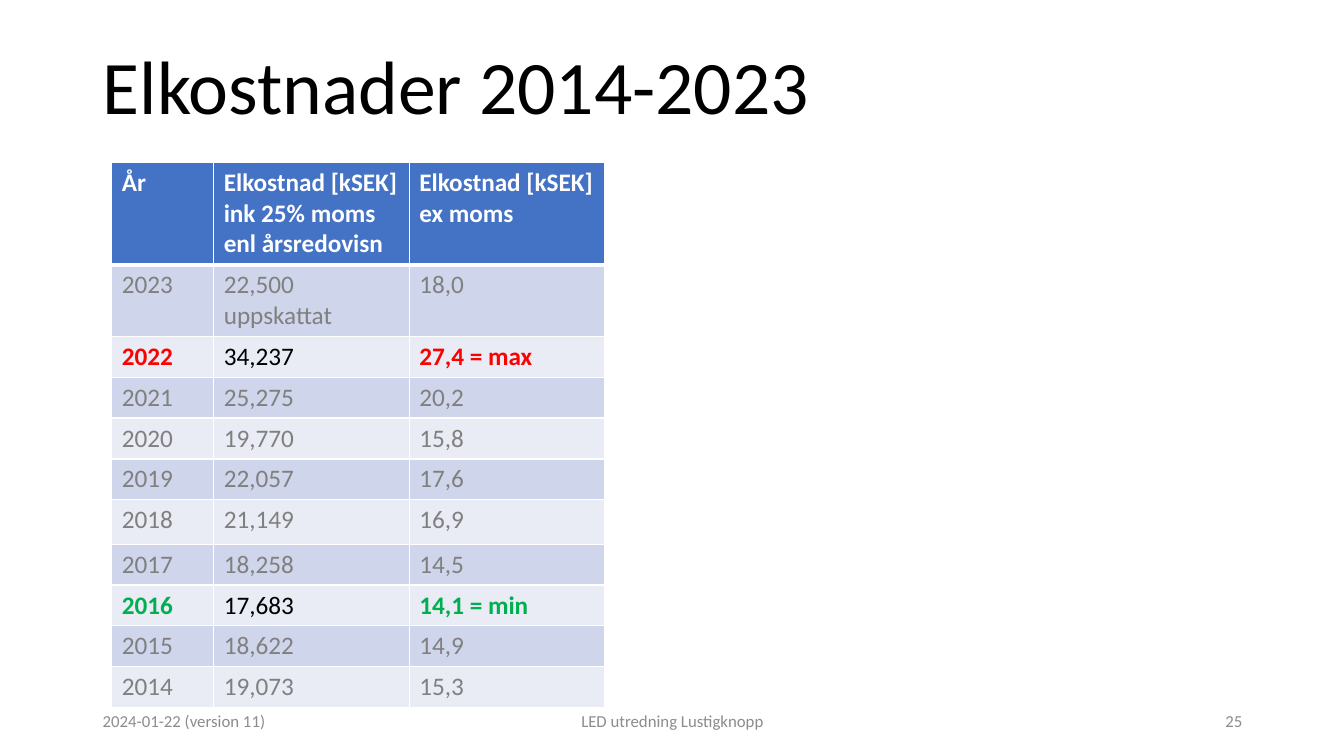
import pptx
import pptx.util
import pptx.dml.color
import pptx.enum.text
import pptx.oxml.ns
import lxml.etree

RGB = pptx.dml.color.RGBColor
ALIGN = pptx.enum.text.PP_ALIGN
MIDDLE = pptx.enum.text.MSO_ANCHOR.MIDDLE

BLACK = RGB(0x00, 0x00, 0x00)
WHITE = RGB(0xFF, 0xFF, 0xFF)
GREY = RGB(0x80, 0x80, 0x80)
FOOTER_GREY = RGB(0x8C, 0x8C, 0x8C)
RED = RGB(0xFF, 0x00, 0x00)
GREEN = RGB(0x00, 0xB0, 0x50)
HEADER_BLUE = RGB(0x44, 0x72, 0xC4)
BANDS = RGB(0xCF, 0xD5, 0xEA), RGB(0xE9, 0xEB, 0xF5)

HEADER = ["År", "Elkostnad [kSEK] ink 25% moms \nenl årsredovisn", "Elkostnad [kSEK] ex moms"]
COSTS = [
    ["2023", "22,500 uppskattat", "18,0"],
    ["2022", "34,237", "27,4 = max"],
    ["2021", "25,275", "20,2"],
    ["2020", "19,770", "15,8"],
    ["2019", "22,057", "17,6"],
    ["2018", "21,149", "16,9"],
    ["2017", "18,258", "14,5"],
    ["2016", "17,683", "14,1 = min"],
    ["2015", "18,622", "14,9"],
    ["2014", "19,073", "15,3"],
]
HIGHLIGHTS = {"2022": RED, "2016": GREEN}
COLUMN_WIDTHS = [101, 194, 194]
ROW_HEIGHTS = [100, 71] + [40] * 4 + [44] + [40] * 4


def px(n):
    """100 px to the inch."""
    return pptx.util.Emu(n * 9144)


class Deck:
    font = "Calibri"

    def __init__(self, width, height):
        self.prs = pptx.Presentation()
        self.prs.slide_width, self.prs.slide_height = px(width), px(height)
        self.s = self.prs.slides.add_slide(self.prs.slide_layouts[5])

    def fill_text(self, tf, text, size, color, bold=False, align=ALIGN.LEFT):
        tf.word_wrap = True
        p = tf.paragraphs[0]
        p.alignment = align
        for i, line in enumerate(text.split("\n")):
            if i:
                p.add_line_break()
            r = p.add_run()
            r.text = line
            r.font.name, r.font.size = self.font, pptx.util.Pt(size)
            r.font.bold, r.font.color.rgb = bold, color
        return p

    def title(self, x, y, w, h, text):
        sp = self.s.shapes.title
        sp.left, sp.top, sp.width, sp.height = map(px, (x, y, w, h))
        tf = sp.text_frame
        tf.auto_size = pptx.enum.text.MSO_AUTO_SIZE.NONE
        tf.vertical_anchor = MIDDLE
        self.fill_text(tf, text, 54, BLACK).line_spacing = 0.9

    def text(self, x, y, w, h, text, align):
        tf = self.s.shapes.add_textbox(*map(px, (x, y, w, h))).text_frame
        tf.vertical_anchor = MIDDLE
        self.fill_text(tf, text, 12, FOOTER_GREY, align=align)

    def table(self, x, y, widths, heights):
        frame = self.s.shapes.add_table(len(heights), len(widths), px(x), px(y),
                                        px(sum(widths)), px(sum(heights)))
        for column, w in zip(frame.table.columns, widths):
            column.width = px(w)
        for row, h in zip(frame.table.rows, heights):
            row.height = px(h)
        return frame.table

    def cell(self, cell, text, color, bold, fill, top=1, bottom=1):
        qn = pptx.oxml.ns.qn
        tcPr = cell._tc.get_or_add_tcPr()
        for side, points in zip("LRTB", (1, 1, top, bottom)):
            ln = lxml.etree.SubElement(tcPr, qn("a:ln" + side), w=str(pptx.util.Pt(points)))
            solid = lxml.etree.SubElement(ln, qn("a:solidFill"))
            lxml.etree.SubElement(solid, qn("a:srgbClr"), val=str(WHITE))
        cell.fill.solid()
        cell.fill.fore_color.rgb = fill
        self.fill_text(cell.text_frame, text, 18, color, bold)


def main():
    deck = Deck(1333, 750)
    deck.title(92, 40, 1150, 99, "Elkostnader 2014-2023")

    # Cost table: header, then banded years with the extremes highlighted
    table = deck.table(111, 161, COLUMN_WIDTHS, ROW_HEIGHTS)
    for col, text in enumerate(HEADER):
        deck.cell(table.cell(0, col), text, WHITE, True, HEADER_BLUE, bottom=3)
    for i, values in enumerate(COSTS):
        accent = HIGHLIGHTS.get(values[0])
        for col, text in enumerate(values):
            bold = accent is not None and col != 1
            color = accent if bold else BLACK if accent else GREY
            deck.cell(table.cell(i + 1, col), text, color, bold, BANDS[i % 2],
                      top=1 if i else 3)

    # Footer
    deck.text(92, 695, 300, 40, "2024-01-22 (version 11)", ALIGN.LEFT)
    deck.text(442, 695, 450, 40, "LED utredning Lustigknopp", ALIGN.CENTER)
    deck.text(942, 695, 300, 40, "25", ALIGN.RIGHT)

    deck.prs.save("out.pptx")


if __name__ == "__main__":
    main()
